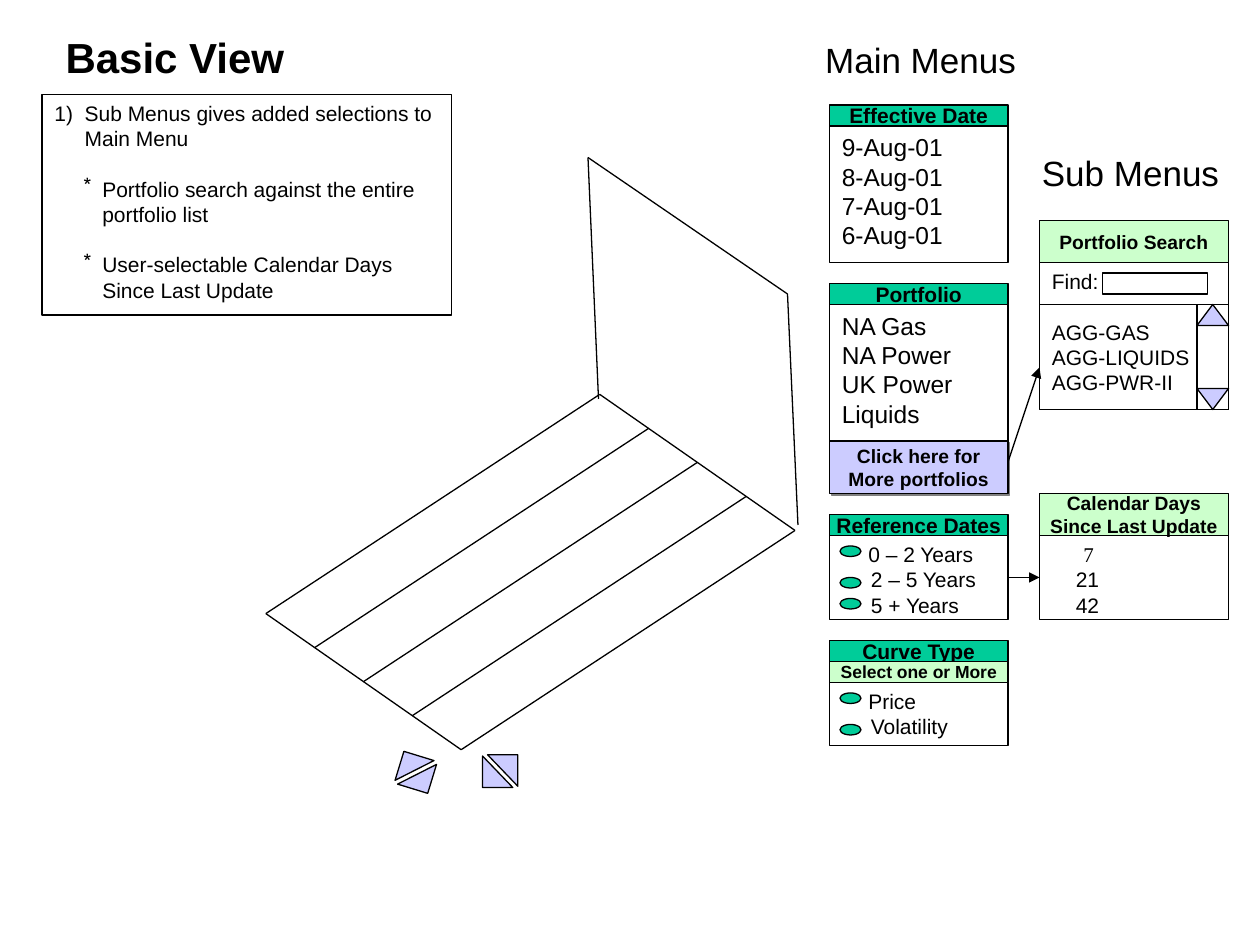
from dataclasses import dataclass

from lxml import etree
from pptx import Presentation
from pptx.dml.color import RGBColor
from pptx.enum import shapes, text
from pptx.oxml import ns
from pptx.util import Inches, Pt

SHAPE = shapes.MSO_SHAPE
ALIGN = text.PP_ALIGN
ANCHOR = text.MSO_ANCHOR


@dataclass(frozen=True)
class Theme:
    ink: str = "000000"
    green: str = "00CC99"
    mint: str = "CCFFCC"
    lilac: str = "CCCCFF"
    shade: str = "808080"
    font: str = "Arial"
    serif: str = "Times New Roman"
    title: int = 24
    section: int = 20
    entry: int = 14
    body: int = 12
    sub_head: int = 11
    hint: int = 10
    line: float = 0.75
    leading: float = 1.2


@dataclass(frozen=True)
class Line:
    """One paragraph; indent and hang are in inches, before is in points."""
    text: str
    indent: float = 0
    hang: float = 0
    before: float = 0
    bullet: tuple = ()
    font: str = ""


THEME = Theme()
MAIN_X, MAIN_W = 79, 17
SUB_X, SUB_W = 99, 18
GAP = THEME.body * THEME.leading


def grid(*units):
    """The menus sit on a grid of twelve units to the inch."""
    return [Inches(u / 12) for u in units]


def inches(*values):
    return [Inches(v) for v in values]


def rgb(value):
    return RGBColor.from_string(value)


def write(tf, lines, *, size=THEME.body, bold=False, align=ALIGN.LEFT,
          anchor=ANCHOR.TOP, margins=(0.1, 0.05), wrap=True):
    tf.word_wrap = wrap
    tf.auto_size = text.MSO_AUTO_SIZE.NONE
    tf.vertical_anchor = anchor
    tf.margin_left = tf.margin_right = Inches(margins[0])
    tf.margin_top = tf.margin_bottom = Inches(margins[1])
    for i, item in enumerate(lines):
        line = item if isinstance(item, Line) else Line(item)
        p = tf.paragraphs[0] if i == 0 else tf.add_paragraph()
        p.text = line.text
        p.alignment = align
        p.line_spacing = Pt(size * THEME.leading)
        p.space_before = Pt(line.before)
        pPr = p._p.get_or_add_pPr()
        pPr.set("marL", str(Inches(line.indent)))
        pPr.set("indent", str(Inches(-line.hang)))
        tag, key, value = line.bullet or ("a:buNone", None, None)
        bullet = etree.SubElement(pPr, ns.qn(tag))
        if key:
            bullet.set(key, value)
        for r in p.runs:
            r.font.name = line.font or THEME.font
            r.font.size = Pt(size)
            r.font.bold = bold
            r.font.color.rgb = rgb(THEME.ink)


def add_shape(s, kind, box, fill=None, rotation=0):
    sp = s.shapes.add_shape(kind, *box)
    sp.shadow.inherit = False
    sp.rotation = rotation
    sp.line.color.rgb = rgb(THEME.ink)
    sp.line.width = Pt(THEME.line)
    if fill:
        sp.fill.solid()
        sp.fill.fore_color.rgb = rgb(fill)
    else:
        sp.fill.background()
    return sp


def add_line(s, ends, arrow=False):
    c = s.shapes.add_connector(shapes.MSO_CONNECTOR.STRAIGHT, *ends)
    c.line.color.rgb = rgb(THEME.ink)
    c.line.width = Pt(THEME.line)
    if arrow:
        etree.SubElement(c.line._get_or_add_ln(), ns.qn("a:tailEnd"), type="triangle")
    etree.SubElement(c._element.spPr, ns.qn("a:effectLst"))


def add_panel(s, x, y, w, h, lines, size=THEME.body):
    sp = add_shape(s, SHAPE.RECTANGLE, grid(x, y, w, h))
    write(sp.text_frame, lines, size=size)


def add_bar(s, x, y, w, h, lines, fill, size):
    sp = add_shape(s, SHAPE.RECTANGLE, grid(x, y, w, h), fill)
    write(sp.text_frame, lines, size=size, bold=True, align=ALIGN.CENTER,
          anchor=ANCHOR.MIDDLE, margins=(0, 0))
    return sp


def add_main_menu(s, y, heading, lines, h, size=THEME.body, hint=None, marks=()):
    """A green bar, an optional hint bar, the entries and their oval marks."""
    add_bar(s, MAIN_X, y, MAIN_W, 2, [heading], THEME.green, THEME.body)
    y += 2
    if hint:
        add_bar(s, MAIN_X, y, MAIN_W, 2, [hint], THEME.mint, THEME.hint)
        y += 2
    add_panel(s, MAIN_X, y, MAIN_W, h, lines, size)
    for offset in marks:
        add_shape(s, SHAPE.OVAL, grid(MAIN_X + 1, y + offset, 2, 1), THEME.green)


def add_sub_menu(s, y, heading, lines, h):
    add_bar(s, SUB_X, y, SUB_W, 4, heading, THEME.mint, THEME.sub_head)
    add_panel(s, SUB_X, y + 4, SUB_W, h, lines)


def add_section_title(s, label, box):
    tb = s.shapes.add_textbox(*box)
    write(tb.text_frame, [label], size=THEME.section, wrap=False)


def add_drop_shadow(sp):
    effects = sp._element.spPr.find(ns.qn("a:effectLst"))
    shadow = etree.SubElement(effects, ns.qn("a:outerShdw"), dist=str(Pt(1.4)),
                              dir="2700000", algn="ctr", rotWithShape="0")
    etree.SubElement(shadow, ns.qn("a:srgbClr"), val=THEME.shade)


def add_title_and_note(s):
    title = s.shapes.title
    title.left, title.top, title.width, title.height = inches(0.42, 0.2, 1.94, 0.5)
    write(title.text_frame, ["Basic View"], size=THEME.title, bold=True, wrap=False)
    star = dict(indent=0.38, hang=0.15, before=GAP, bullet=("a:buChar", "char", "*"))
    add_panel(s, 4, 9, 39, 21, [
        Line("Sub Menus gives added selections to\vMain Menu", 0.24, 0.24,
             bullet=("a:buAutoNum", "type", "arabicParenR")),
        Line("Portfolio search against the entire\vportfolio list", **star),
        Line("User-selectable Calendar Days\vSince Last Update", **star),
    ])


def add_view_frame(s):
    """The upright wall, the slanted floor with its lanes, and the turn buttons."""
    for ends in ((56, 15, 57, 38), (75, 28, 76, 50), (56, 15, 75, 28)):
        add_line(s, grid(*ends))
    x, y = 2.11, 4.87
    depth_x, depth_y = 2.65, -1.74
    width_x, width_y = 1.55, 1.08
    lanes = 4
    for i in range(lanes + 1):
        lx, ly = x + width_x * i / lanes, y + width_y * i / lanes
        add_line(s, inches(lx, ly, lx + depth_x, ly + depth_y))
    for ex, ey in ((x, y), (x + depth_x, y + depth_y)):
        add_line(s, inches(ex, ey, ex + width_x, ey + width_y))
    for left, top, turn in ((3.83, 6, 0), (3.87, 5.99, 180),
                            (3.17, 5.99, 107), (3.19, 6.02, 287)):
        add_shape(s, SHAPE.RIGHT_TRIANGLE, inches(left, top, 0.24, 0.25),
                  THEME.lilac, turn)


def add_main_menus(s):
    add_section_title(s, "Main Menus", inches(6.45, 0.26, 1.71, 0.44))
    dates = [f"{day}-Aug-01" for day in (9, 8, 7, 6)]
    add_main_menu(s, 10, "Effective Date", dates, 13, THEME.entry)
    add_main_menu(s, 27, "Portfolio", ["NA Gas", "NA Power", "UK Power", "Liquids"],
                  13, THEME.entry)
    button = add_bar(s, MAIN_X, 42, MAIN_W, 5, ["Click here for", "More portfolios"],
                     THEME.lilac, THEME.sub_head)
    add_drop_shadow(button)
    add_main_menu(s, 49, "Reference Dates",
                  [Line("0 – 2 Years", 0.21), Line("2 – 5 Years", 0.23),
                   Line("5 + Years", 0.23)], 8, marks=(1, 4, 6))
    add_main_menu(s, 61, "Curve Type", [Line("Price", 0.21), Line("Volatility", 0.23)],
                  6, hint="Select one or More", marks=(1, 4))


def add_sub_menus(s):
    add_section_title(s, "Sub Menus", inches(8.17, 1.15, 1.61, 0.44))
    add_sub_menu(s, 21, ["Portfolio Search"],
                 ["Find:", Line("AGG-GAS", before=GAP), "AGG-LIQUIDS", "AGG-PWR-II"], 14)
    add_shape(s, SHAPE.RECTANGLE, grid(105, 26, 10, 2))
    add_line(s, grid(SUB_X, 29, SUB_X + SUB_W, 29))
    add_shape(s, SHAPE.RECTANGLE, grid(114, 29, 3, 10))
    for top, turn in ((29, 0), (37, 180)):
        add_shape(s, SHAPE.ISOSCELES_TRIANGLE, grid(114, top, 3, 2), THEME.lilac, turn)
    add_sub_menu(s, 47, ["Calendar Days", "Since Last Update"],
                 [Line("7", 0.25, font=THEME.serif), Line("21", 0.19),
                  Line("42", 0.19)], 8)
    for start, end in ((44, 35), (55, 55)):
        add_line(s, grid(MAIN_X + MAIN_W, start, SUB_X, end), arrow=True)


def main():
    prs = Presentation()
    prs.slide_width, prs.slide_height = inches(10, 7.5)
    s = prs.slides.add_slide(prs.slide_layouts.get_by_name("Title Only"))
    add_title_and_note(s)
    add_view_frame(s)
    add_main_menus(s)
    add_sub_menus(s)
    prs.save("out.pptx")


if __name__ == "__main__":
    main()
